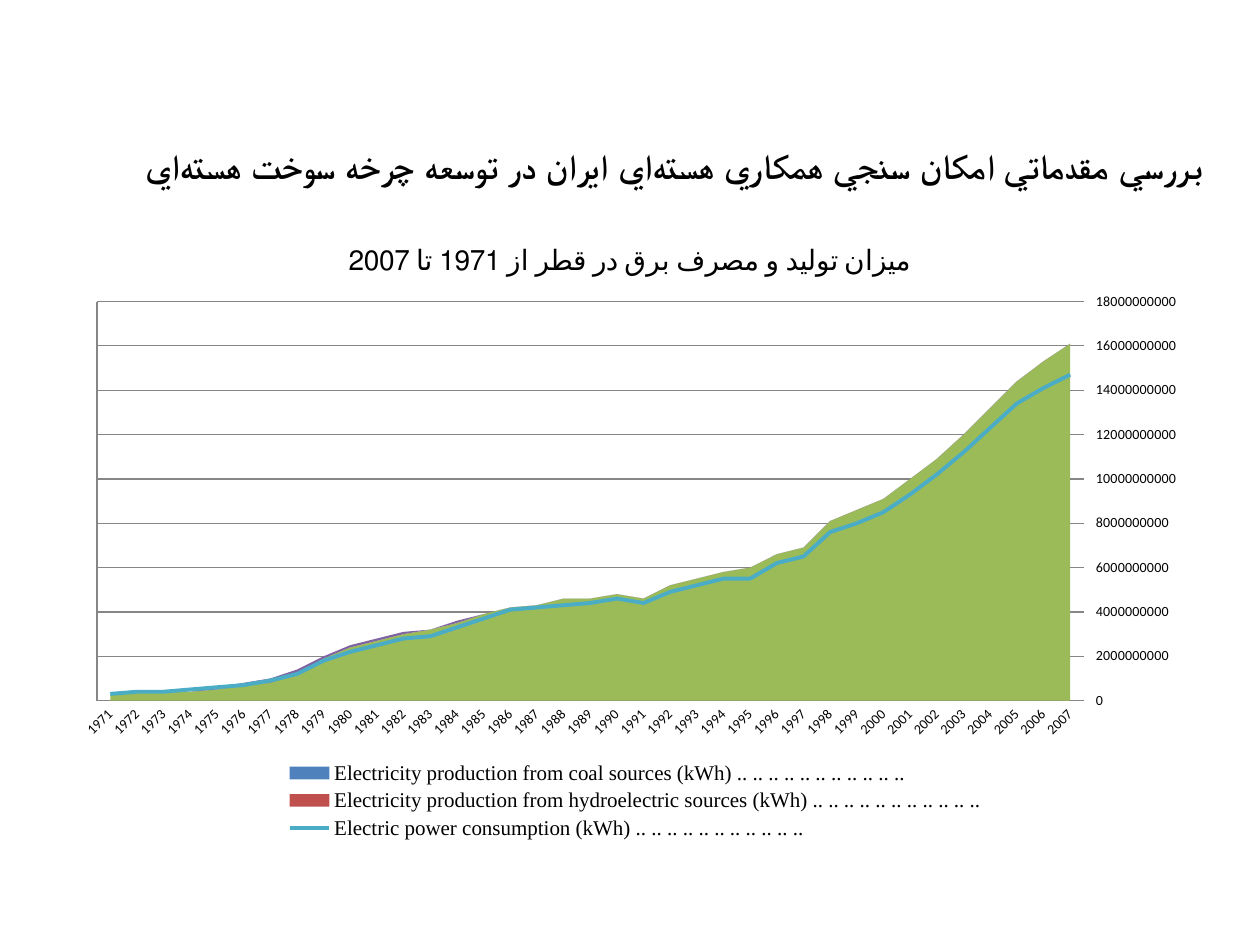
from dataclasses import dataclass

from lxml.etree import SubElement
from pptx import Presentation
from pptx.chart.data import CategoryChartData
from pptx.dml.color import RGBColor
from pptx.enum.chart import (
    XL_CHART_TYPE, XL_LEGEND_POSITION, XL_MARKER_STYLE,
    XL_TICK_LABEL_POSITION, XL_TICK_MARK)
from pptx.enum.text import MSO_ANCHOR, PP_ALIGN
from pptx.oxml import parse_xml
from pptx.oxml.ns import nsdecls, qn
from pptx.util import Inches, Pt


@dataclass(frozen=True)
class Theme:
    font: str = "Calibri"
    legend_font: str = "Times New Roman"
    text: str = "000000"
    grid: str = "868686"
    series: tuple = ("4F81BD", "C0504D", "9BBB59", "8064A2", "4BACC6")
    heading_size: int = 20
    chart_title_size: int = 16
    legend_size: int = 12
    chart_size: int = 10
    axis_size: int = 8


THEME = Theme()
ZERO_WIDTH_NON_JOINER = chr(0x200C)
NUCLEAR = ZERO_WIDTH_NON_JOINER.join(("هسته", "اي"))
HEADING = f"بررسي مقدماتي امکان سنجي همکاري {NUCLEAR} ايران در توسعه چرخه سوخت {NUCLEAR}"
CHART_TITLE = "ميزان توليد و مصرف برق در قطر از 1971 تا 2007"
YEARS = range(1971, 2008)
KWH_UNIT = 100_000_000
DOTS = " .." * 11
NO_OUTPUT = [0] * len(YEARS)
HIDDEN_LEGEND_ENTRIES = (2, 3)

# Values in units of 100 million kWh
ELECTRICITY = {
    "Electricity production from coal sources (kWh)" + DOTS: NO_OUTPUT,
    "Electricity production from hydroelectric sources (kWh)" + DOTS: NO_OUTPUT,
    "Series 3": [
        3, 4, 4, 4, 5, 7, 8, 12, 19, 24, 27, 30, 32, 35, 39, 42, 43, 46, 46,
        48, 46, 52, 55, 58, 60, 66, 69, 81, 86, 91, 100, 109, 120, 132, 144,
        153, 161],
    "Series 4": [0] * 4 + [1, 1, 2, 2, 1, 1, 1, 1, 0, 1] + [0] * 23,
    "Electric power consumption (kWh)" + DOTS: [
        3, 4, 4, 5, 6, 7, 9, 12, 18, 22, 25, 28, 29, 33, 37, 41, 42, 43, 44,
        46, 44, 49, 52, 55, 55, 62, 65, 76, 80, 85, 93, 102, 112, 123, 134,
        141, 147],
}


def style_font(font, size, name=THEME.font, bold=False):
    font.name, font.size, font.bold = name, Pt(size), bold
    font.color.rgb = RGBColor.from_string(THEME.text)


def manual_layout(x, y, w, h, inner=False):
    """Return a c:layout element with fractions of the chart area."""
    target = '<c:layoutTarget val="inner"/>' if inner else ""
    return parse_xml(
        f'<c:layout {nsdecls("c")}><c:manualLayout>{target}'
        '<c:xMode val="edge"/><c:yMode val="edge"/>'
        f'<c:x val="{x}"/><c:y val="{y}"/><c:w val="{w}"/><c:h val="{h}"/>'
        '</c:manualLayout></c:layout>')


def add_heading(slide):
    title = slide.shapes.title
    title.left, title.top = Inches(0.7), Inches(1.09)
    title.width, title.height = Inches(9.3), Inches(0.55)
    frame = title.text_frame
    frame.word_wrap = True
    frame.vertical_anchor = MSO_ANCHOR.BOTTOM
    frame.margin_bottom = Inches(0.16)
    paragraph = frame.paragraphs[0]
    paragraph.alignment = PP_ALIGN.CENTER
    paragraph.line_spacing = 0.8
    paragraph._p.get_or_add_pPr().set("rtl", "1")
    run = paragraph.add_run()
    run.text = HEADING
    style_font(run.font, THEME.heading_size, bold=True)


def move_last_series_to_line(chart):
    """Turn the last area series into a line on the same axes."""
    area = chart.plots[0]._element
    line = parse_xml(
        f'<c:lineChart {nsdecls("c")}><c:grouping val="standard"/>'
        '<c:varyColors val="0"/></c:lineChart>')
    line.append(area.findall(qn("c:ser"))[-1])
    SubElement(line, qn("c:marker")).set("val", "1")
    for axis_id in area.findall(qn("c:axId")):
        SubElement(line, qn("c:axId")).set("val", axis_id.get("val"))
    area.addnext(line)


def color_series(chart):
    areas, lines = chart.plots
    areas.vary_by_categories = False
    for series, color in zip(areas.series, THEME.series):
        series.format.fill.solid()
        series.format.fill.fore_color.rgb = RGBColor.from_string(color)
    consumption = lines.series[0]
    consumption.smooth = False
    consumption.marker.style = XL_MARKER_STYLE.NONE
    consumption.format.line.width = Pt(2.25)
    consumption.format.line.color.rgb = RGBColor.from_string(THEME.series[-1])


def style_axes(chart):
    years, kwh = chart.category_axis, chart.value_axis
    grid_color = RGBColor.from_string(THEME.grid)
    for axis in (years, kwh):
        axis.major_tick_mark = axis.minor_tick_mark = XL_TICK_MARK.NONE
        style_font(axis.tick_labels.font, THEME.axis_size)
        axis.format.line.color.rgb = grid_color
    years._element.find(qn("c:txPr")).find(qn("a:bodyPr")).set("rot", "-2700000")
    years.has_major_gridlines = False
    kwh.has_major_gridlines = True
    kwh.major_gridlines.format.line.color.rgb = grid_color
    kwh.minimum_scale, kwh.maximum_scale = 0, 180 * KWH_UNIT
    kwh.major_unit = 20 * KWH_UNIT
    kwh.tick_label_position = XL_TICK_LABEL_POSITION.HIGH
    kwh.tick_labels.number_format = "0"
    kwh.tick_labels.number_format_is_linked = False
    kwh._element.find(qn("c:crossBetween")).set("val", "between")


def style_legend(chart):
    chart.has_legend = True
    legend = chart.legend
    legend.position = XL_LEGEND_POSITION.BOTTOM
    legend.include_in_layout = False
    style_font(legend.font, THEME.legend_size, THEME.legend_font)
    element = legend._element
    for old in element.findall(qn("c:layout")):
        element.remove(old)
    parts = [
        parse_xml(f'<c:legendEntry {nsdecls("c")}><c:idx val="{index}"/>'
                  '<c:delete val="1"/></c:legendEntry>')
        for index in HIDDEN_LEGEND_ENTRIES]
    parts.append(manual_layout(0.19, 0.86, 0.63, 0.14))
    for part in reversed(parts):
        element.find(qn("c:legendPos")).addnext(part)


def add_electricity_chart(slide):
    data = CategoryChartData(number_format="0")
    data.categories = [str(year) for year in YEARS]
    for name, values in ELECTRICITY.items():
        data.add_series(name, [value * KWH_UNIT for value in values])
    chart = slide.shapes.add_chart(
        XL_CHART_TYPE.AREA_STACKED, Inches(0.5), Inches(1.75),
        Inches(9), Inches(4.95), data).chart
    style_font(chart.font, THEME.chart_size)
    chart.has_title = True
    title = chart.chart_title
    title.include_in_layout = False
    run = title.text_frame.paragraphs[0].add_run()
    run.text = CHART_TITLE
    style_font(run.font, THEME.chart_title_size)
    move_last_series_to_line(chart)
    color_series(chart)
    style_axes(chart)
    style_legend(chart)
    plot_area = chart._chartSpace.chart.plotArea
    for old in plot_area.findall(qn("c:layout")):
        plot_area.remove(old)
    plot_area.insert(0, manual_layout(0.03, 0.13, 0.87, 0.64, inner=True))


def main():
    presentation = Presentation()
    presentation.slide_width, presentation.slide_height = Inches(10), Inches(7.5)
    slide = presentation.slides.add_slide(presentation.slide_layouts[5])
    add_electricity_chart(slide)
    add_heading(slide)
    presentation.save("out.pptx")


if __name__ == "__main__":
    main()
